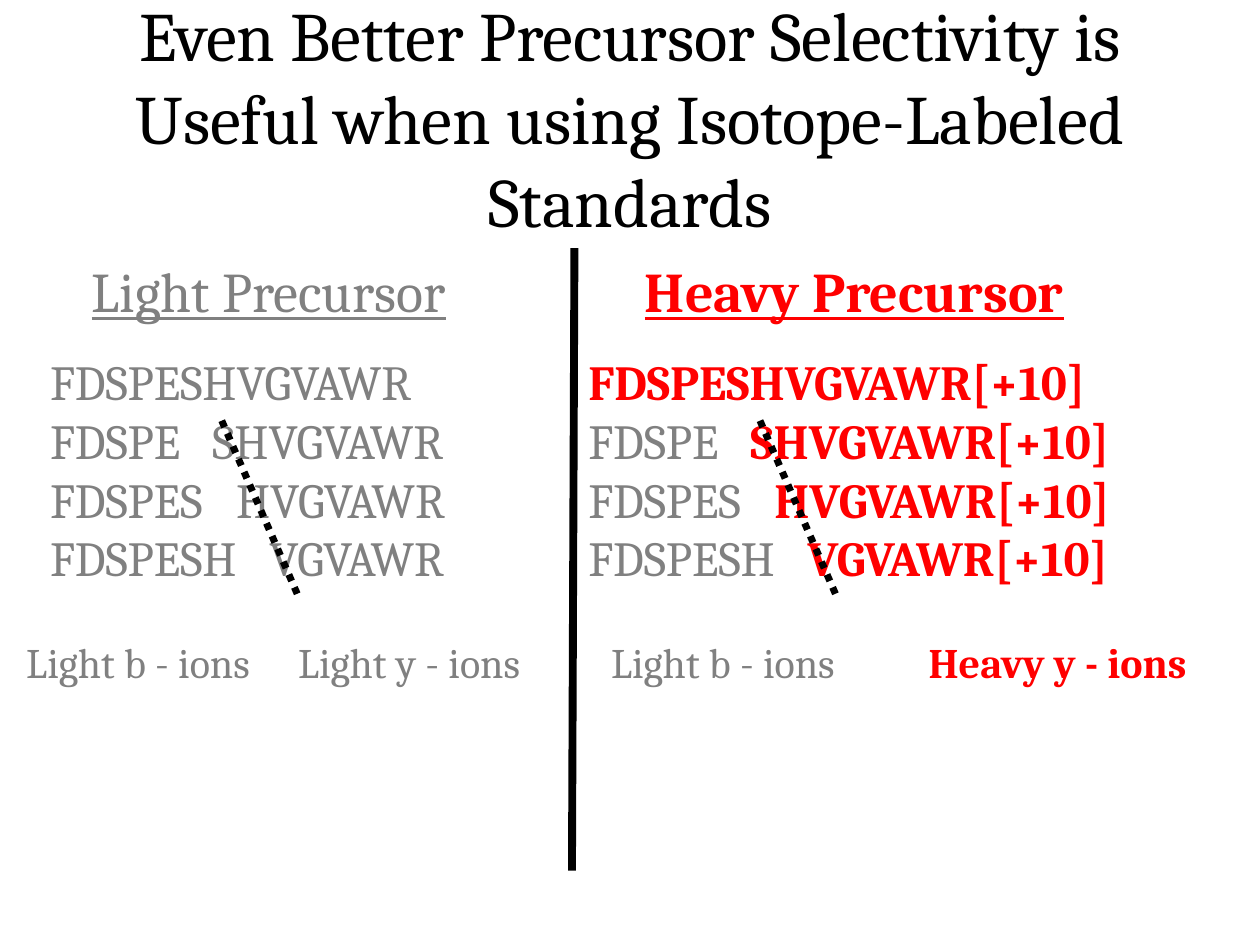
from lxml import etree
from pptx import Presentation
from pptx.dml.color import RGBColor
from pptx.enum.dml import MSO_LINE
from pptx.enum.shapes import MSO_CONNECTOR
from pptx.enum.text import MSO_ANCHOR, PP_ALIGN
from pptx.oxml.ns import qn
from pptx.util import Cm, Pt

BLACK = RGBColor(0, 0, 0)
GRAY = RGBColor(0x80, 0x80, 0x80)
RED = RGBColor(0xFF, 0, 0)
FONT = "Cambria"
DOTS = MSO_LINE.ROUND_DOT
LINE = MSO_CONNECTOR.STRAIGHT
MIDDLE = MSO_ANCHOR.MIDDLE
CENTER = PP_ALIGN.CENTER

PEPTIDE = "FDSPESHVGVAWR"
CUTS = [(5, 3.27), (6, 3.75), (7, 4.42)]


def add_box(slide, x, y, w, h, wrap=False):
    frame = slide.shapes.add_textbox(Cm(x), Cm(y), Cm(w), Cm(h)).text_frame
    frame.word_wrap = wrap
    return frame


def add_run(para, text, size, color, bold=False, under=False):
    run = para.add_run()
    run.text = text
    font = run.font
    font.name, font.size = FONT, Pt(size)
    font.bold, font.underline = bold, under
    font.color.rgb = color


def add_tab(para, pos):
    stops = etree.SubElement(para._p.get_or_add_pPr(), qn("a:tabLst"))
    etree.SubElement(stops, qn("a:tab"), pos=str(Cm(pos)), algn="l")


def add_line(slide, x1, y1, x2, y2, width):
    line = slide.shapes.add_connector(LINE, Cm(x1), Cm(y1), Cm(x2), Cm(y2))
    line.line.color.rgb = BLACK
    line.line.width = Pt(width)
    etree.SubElement(line._element.spPr, qn("a:effectLst"))
    return line


def add_title(slide, x, y, w, h):
    frame = add_box(slide, x, y, w, h, True)
    frame.vertical_anchor = MIDDLE
    para = frame.paragraphs[0]
    para.alignment = CENTER
    add_run(para, "Even Better Precursor Selectivity is Useful when using "
            "Isotope-Labeled Standards", 39.6, BLACK)


def add_panel(slide, x, y, w, name, tag, color, bold, shifts):
    head_x, b_x, y_x = shifts
    head = add_box(slide, x + head_x, y, 9, 1.63)
    add_run(head.paragraphs[0], f"{name} Precursor", 32, color, bold, True)

    rows = add_box(slide, x, y + 1.91, w, 5.05, True)
    add_run(rows.paragraphs[0], PEPTIDE + tag, 28, color, bold)
    for cut, pos in CUTS:
        para = rows.add_paragraph()
        add_tab(para, pos)
        add_run(para, PEPTIDE[:cut] + "\t", 28, GRAY)
        add_run(para, PEPTIDE[cut:] + tag, 28, color, bold)

    split = add_line(slide, x + 3.71, y + 3.43, x + 5.24, y + 6.94, 4)
    split.line.dash_style = DOTS

    ions = [(b_x, "Light b - ions", GRAY, False),
            (y_x, f"{name} y - ions", color, bold)]
    for left, text, tint, heavy in ions:
        frame = add_box(slide, x + left, y + 7.65, 5.8, 1.27)
        add_run(frame.paragraphs[0], text, 24, tint, heavy)


def main():
    deck = Presentation()
    deck.slide_width, deck.slide_height = Cm(25.4), Cm(19.05)
    slide = deck.slides.add_slide(deck.slide_layouts[6])
    add_title(slide, 1.27, 0.76, 22.86, 3.18)
    add_panel(slide, 0.76, 5.05, 12.7, "Light", "", GRAY, False,
              (0.84, -0.48, 5))
    add_panel(slide, 11.61, 5.05, 13.79, "Heavy", "[+10]", RED, True,
              (1.14, 0.46, 6.86))
    add_line(slide, 11.58, 5, 11.53, 17.55, 4.5)
    deck.save("out.pptx")


if __name__ == "__main__":
    main()
